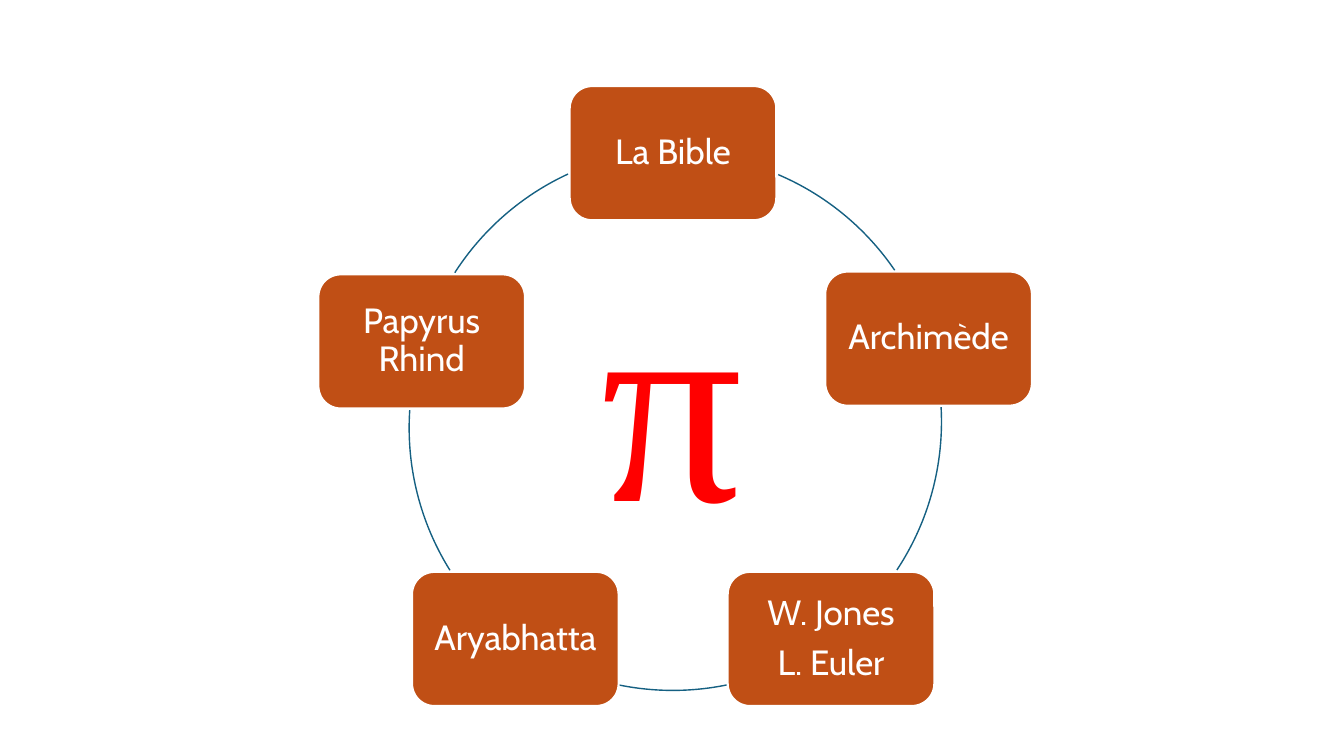
import pptx
import pptx.util
import pptx.dml.color
import pptx.enum.shapes
import pptx.enum.text

Pt = pptx.util.Pt
Kind = pptx.enum.shapes.MSO_SHAPE
Anchor = pptx.enum.text.MSO_ANCHOR
center = pptx.enum.text.PP_ALIGN.CENTER


def color(code):
    return pptx.dml.color.RGBColor.from_string(code)


def write(frame, lines, look, size, font, code):
    for name, value in look.items():
        setattr(frame, name, value)
    for i, line in enumerate(lines):
        para = frame.paragraphs[0] if i == 0 else frame.add_paragraph()
        para.text = line
        para.alignment = center
        para.line_spacing = 0.9
        para.space_after = Pt(8.75)
        para.font.size = Pt(size)
        para.font.name = font
        para.font.color.rgb = color(code)


deck = pptx.Presentation()
deck.slide_width = Pt(960)
deck.slide_height = Pt(540)
slide = deck.slides.add_slide(deck.slide_layouts[6])
shapes = slide.shapes

title = shapes.add_textbox(Pt(120), Pt(87.7), Pt(720), Pt(317))
look = {"word_wrap": True, "vertical_anchor": Anchor.BOTTOM}
write(title.text_frame, ["π"], look, 200, "Times New Roman", "FF0000")

ring = 383.8
arcs = [
    (288.7, 109.4, 293.1, 325.7),
    (288.7, 109.4, 356.9, 33.5),
    (288.7, 109.4, 78.4, 101.6),
    (292.3, 113.8, 148, 183.8),
    (294.5, 106.6, 212.7, 245.2),
]
for left, top, start, end in arcs:
    arc = shapes.add_shape(Kind.ARC, Pt(left), Pt(top), Pt(ring), Pt(ring))
    arc.shadow.inherit = False
    arc.adjustments[0] = start * 0.6
    arc.adjustments[1] = end * 0.6
    arc.fill.background()
    arc.line.color.rgb = color("156082")
    arc.line.width = Pt(1)

cards = [
    (406.9, 61.5, ["La Bible"]),
    (589.5, 194, ["Archimède"]),
    (519.8, 408.5, ["W. Jones", "L. Euler"]),
    (294.3, 408.5, ["Aryabhatta"]),
    (227.4, 196, ["Papyrus Rhind"]),
]
look = {"word_wrap": True, "vertical_anchor": Anchor.MIDDLE}
for side in ("left", "right", "top", "bottom"):
    look["margin_" + side] = Pt(7.2)
for left, top, lines in cards:
    card = shapes.add_shape(
        Kind.ROUNDED_RECTANGLE, Pt(left), Pt(top), Pt(147.6), Pt(95.8))
    card.shadow.inherit = False
    card.fill.solid()
    card.fill.fore_color.rgb = color("C04F15")
    card.line.color.rgb = color("FFFFFF")
    card.line.width = Pt(1.5)
    write(card.text_frame, lines, look, 25, "Cabin", "FFFFFF")

deck.save("out.pptx")
